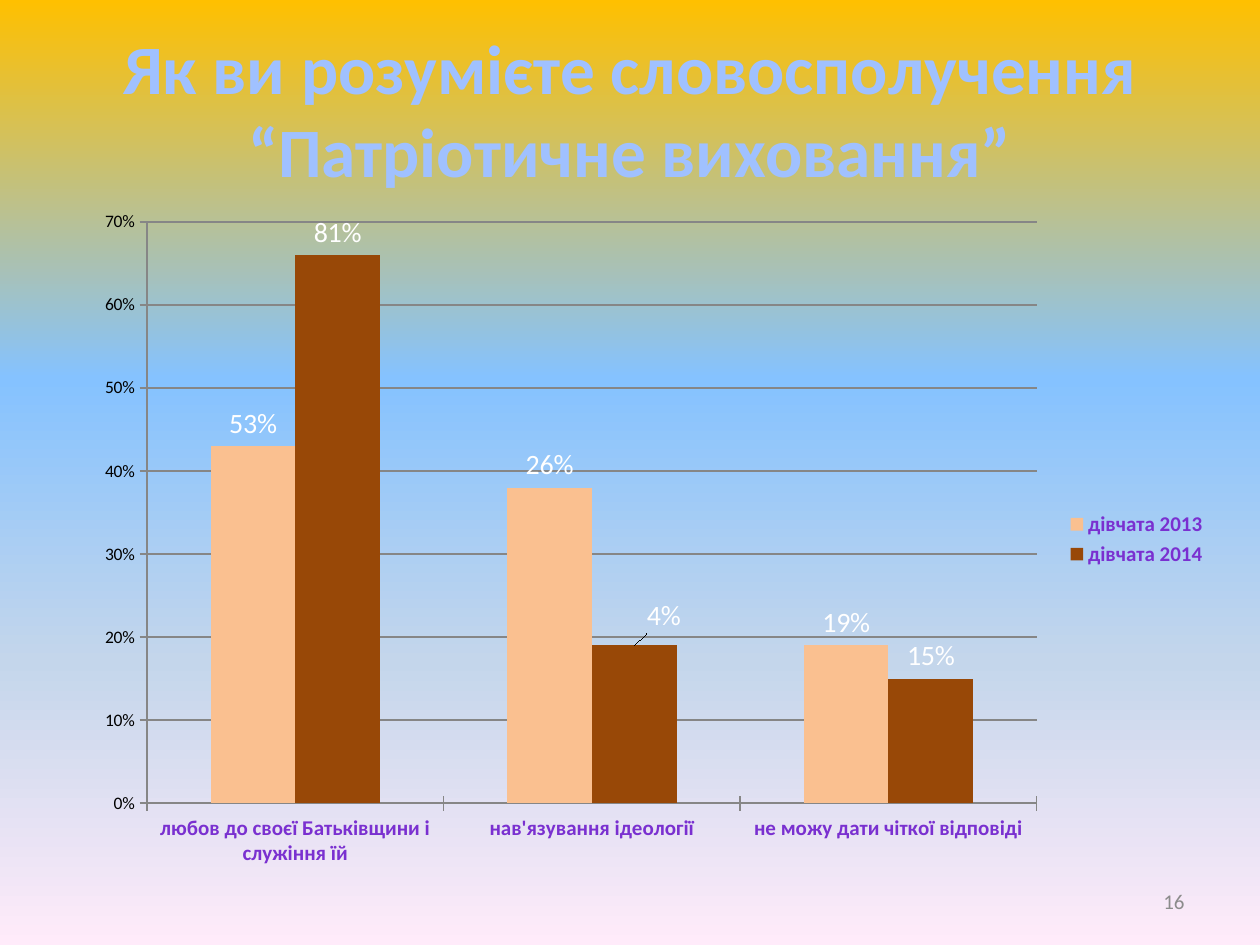
from copy import deepcopy

from pptx import Presentation
from pptx.chart.data import CategoryChartData
from pptx.dml.color import RGBColor
from pptx.enum.chart import XL_CHART_TYPE as ChartType
from pptx.enum.chart import XL_LABEL_POSITION as LabelPosition
from pptx.enum.chart import XL_LEGEND_POSITION as LegendPosition
from pptx.enum.chart import XL_TICK_MARK as TickMark
from pptx.enum.text import MSO_ANCHOR as Anchor
from pptx.enum.text import PP_ALIGN as Align
from pptx.oxml import parse_xml
from pptx.util import Cm, Pt

FONT = "Calibri"
PURPLE = "7A30D0"
GREY = "868686"
CHART_NS = "http://schemas.openxmlformats.org/drawingml/2006/chart"
SKY = [(0, "FFC000"), (0.4, "85C2FF"), (0.7, "C4D6EB"), (1, "FFEBFA")]
ANSWERS = [
    "любов до своєї Батьківщини і служіння їй",
    "нав'язування ідеології",
    "не можу дати чіткої відповіді",
]
GIRLS = [
    ("дівчата 2013", [0.43, 0.38, 0.19], "FAC090", ["53%", "26%"]),
    ("дівчата 2014", [0.66, 0.19, 0.15], "984807", ["81%", "4%"]),
]


def color(value):
    return RGBColor.from_string(value)


def style_font(font, size, tint, bold=False):
    font.name = FONT
    font.size = Pt(size)
    font.bold = bold
    font.color.rgb = color(tint)


def write(frame, text, size=12, tint="000000", bold=False, align=Align.CENTER):
    paragraph = frame.paragraphs[0]
    paragraph.alignment = align
    run = paragraph.add_run()
    run.text = text
    style_font(run.font, size, tint, bold)


def add_text(slide, box, text, **style):
    frame = slide.shapes.add_textbox(*box).text_frame
    frame.word_wrap = True
    frame.vertical_anchor = Anchor.MIDDLE
    write(frame, text, **style)


def paint_sky(slide):
    fill = slide.background.fill
    fill.gradient()
    fill.gradient_angle = 270
    stops = fill.gradient_stops
    first = stops[0]._gs
    for _ in SKY[2:]:
        first.addnext(deepcopy(first))
    for stop, (position, tint) in zip(fill.gradient_stops, SKY):
        stop.position = position
        stop.color.rgb = color(tint)


def manual_layout(**places):
    values = "".join(f'<c:{key} val="{value}"/>' for key, value in places.items())
    return parse_xml(
        f'<c:layout xmlns:c="{CHART_NS}"><c:manualLayout>{values}'
        "</c:manualLayout></c:layout>"
    )


def place_plot(chart):
    plot_area = chart._chartSpace.chart.plotArea
    for old in plot_area.findall(f"{{{CHART_NS}}}layout"):
        plot_area.remove(old)
    plot_area.insert(0, manual_layout(
        layoutTarget="inner", xMode="edge", yMode="edge",
        x=0.056, y=0.034, w=0.783, h=0.854))


def style_axes(chart):
    answers, shares = chart.category_axis, chart.value_axis
    for axis in (answers, shares):
        axis.major_tick_mark = TickMark.CROSS
        axis.format.line.color.rgb = color(GREY)
    style_font(answers.tick_labels.font, 12, PURPLE, True)
    style_font(shares.tick_labels.font, 10, "000000")
    shares.minimum_scale, shares.maximum_scale, shares.major_unit = 0, 0.7, 0.1
    shares.tick_labels.number_format = "0%"
    shares.tick_labels.number_format_is_linked = False
    shares.has_major_gridlines = True
    shares.major_gridlines.format.line.color.rgb = color(GREY)


def style_bars(bars, tint, captions):
    bars.format.fill.solid()
    bars.format.fill.fore_color.rgb = color(tint)
    labels = bars.data_labels
    labels.show_value = True
    labels.number_format = "0%"
    labels.number_format_is_linked = False
    labels.position = LabelPosition.OUTSIDE_END
    style_font(labels.font, 16, "FFFFFF")
    for index, caption in enumerate(captions):
        label = bars.points[index].data_label
        write(label.text_frame, caption, size=16, tint="FFFFFF")
        label.position = LabelPosition.OUTSIDE_END


def add_survey(slide, box):
    data = CategoryChartData(number_format="0%")
    data.categories = ANSWERS
    for name, shares, _, _ in GIRLS:
        data.add_series(name, shares)
    chart = slide.shapes.add_chart(ChartType.COLUMN_CLUSTERED, *box, data).chart
    style_font(chart.font, 10, "000000")
    chart.has_title = False
    chart.has_legend = True
    chart.legend.position = LegendPosition.RIGHT
    chart.legend.include_in_layout = False
    style_font(chart.legend.font, 12, PURPLE, True)
    plot = chart.plots[0]
    plot.gap_width, plot.overlap = 150, 0
    plot.vary_by_categories = False
    for bars, (_, _, tint, captions) in zip(plot.series, GIRLS):
        style_bars(bars, tint, captions)
    ideology_label = plot.series[1].points[1].data_label._get_or_add_dLbl()
    ideology_label.insert(1, manual_layout(x=0.026, y=-0.01))
    style_axes(chart)
    place_plot(chart)


def build_survey_slide(slide, width, height):
    paint_sky(slide)
    add_text(slide, (Cm(1.25), Cm(0.6), width - Cm(2.5), Cm(3.18)),
             "Як ви розумієте словосполучення “Патріотичне виховання”",
             size=39.6, tint="A0C1FF", bold=True)
    add_survey(slide, (Cm(1.68), Cm(4.01), Cm(22.91), Cm(13.72)))
    add_text(slide, (width - Cm(7.19), height - Cm(1.4), Cm(5.92), Cm(1.02)),
             "16", tint="8C8C8C", align=Align.RIGHT)


def main():
    deck = Presentation()
    deck.slide_width, deck.slide_height = Cm(25.4), Cm(19.05)
    slide = deck.slides.add_slide(deck.slide_layouts[6])
    build_survey_slide(slide, deck.slide_width, deck.slide_height)
    deck.save("out.pptx")


if __name__ == "__main__":
    main()
